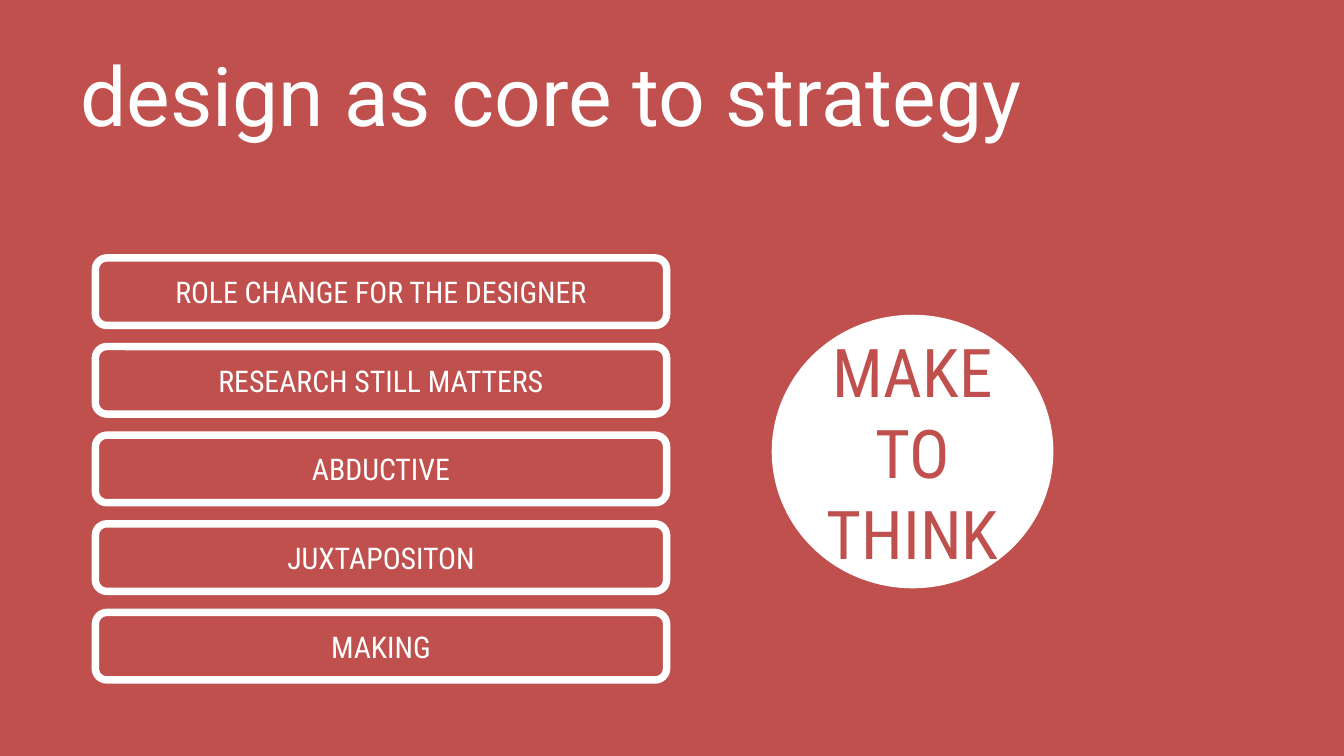
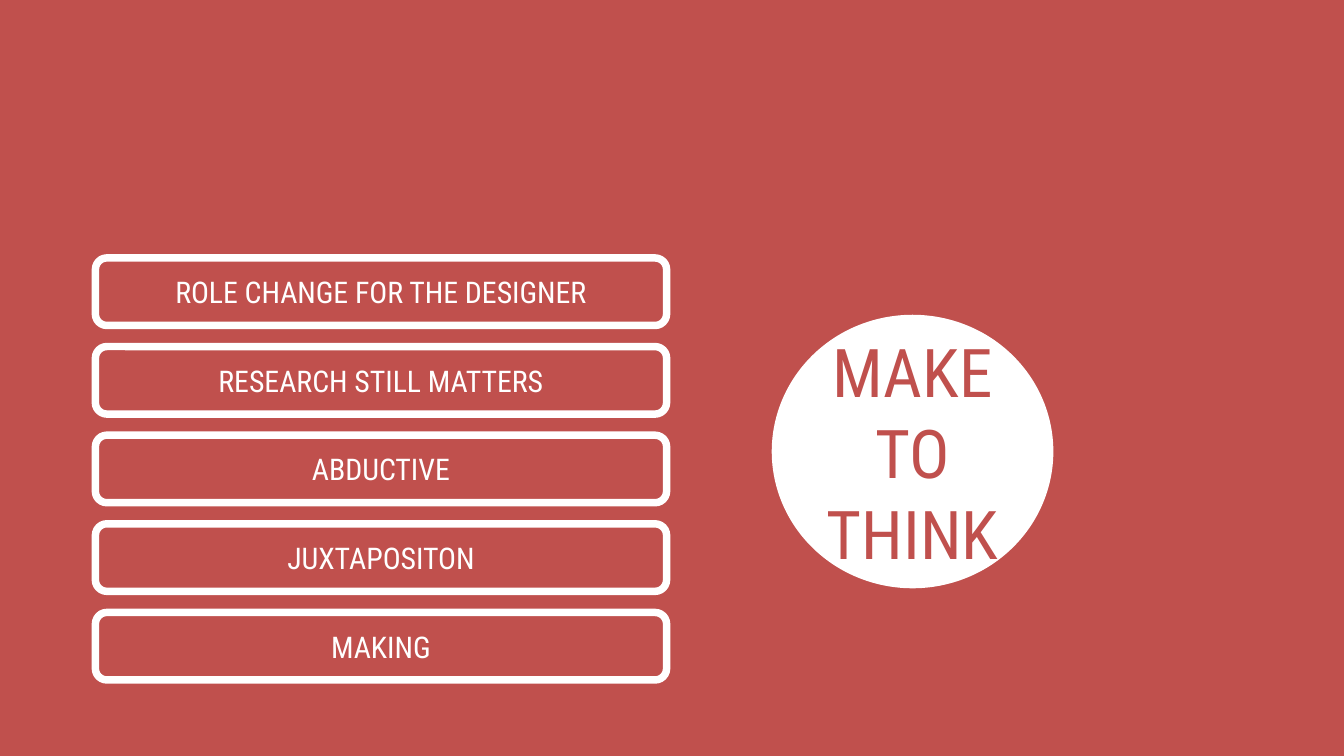
from pptx import Presentation
from pptx.dml.color import RGBColor
from pptx.enum.shapes import MSO_SHAPE
from pptx.enum.text import MSO_ANCHOR, PP_ALIGN
from pptx.util import Inches, Pt

COLORS = {"red": "C0504D", "white": "FFFFFF"}

# Text formats
TITLE = {"name": "Roboto", "size": Pt(44), "color": "white"}
BAR = {"name": "Roboto Condensed", "size": Pt(16), "color": "white"}
CIRCLE = {"name": "Roboto Condensed", "size": Pt(36), "color": "red"}

# Boxes: left, top, width, height in percent of the slide
TITLE_BOX = (5, 4.09, 90, 16.71)
BARS_BOX = (7.1, 34.13, 42.5, 55.82)
CIRCLE_BOX = (57.7, 42.13, 20.4, 35.2)

BAR_SHARE = 0.16  # height of one bar within the stack
THEMES = [
    "ROLE CHANGE FOR THE DESIGNER",
    "RESEARCH STILL MATTERS",
    "ABDUCTIVE",
    "JUXTAPOSITON",
    "MAKING",
]


def rgb(name):
    return RGBColor.from_string(COLORS[name])


def place(prs, box):
    """Turn a percent box into slide lengths."""
    sizes = (prs.slide_width, prs.slide_height) * 2
    return [round(size * share / 100) for size, share in zip(sizes, box)]


def write(sp, text, style, align, inset=(0.1, 0.05)):
    tf = sp.text_frame
    side, end = map(Inches, inset)
    frame = {"word_wrap": True, "vertical_anchor": MSO_ANCHOR.MIDDLE,
             "margin_left": side, "margin_right": side,
             "margin_top": end, "margin_bottom": end}
    for key, value in frame.items():
        setattr(tf, key, value)
    p = tf.paragraphs[0]
    p.alignment = align
    r = p.add_run()
    r.text = text
    for key, value in style.items():
        if key == "color":
            r.font.color.rgb = rgb(value)
        else:
            setattr(r.font, key, value)


def add_outlined(shapes, kind, box, fill=None):
    """Shape with the thick white outline all slides share."""
    sp = shapes.add_shape(kind, *box)
    sp.shadow.inherit = False
    if fill:
        sp.fill.solid()
        sp.fill.fore_color.rgb = rgb(fill)
    else:
        sp.fill.background()
    sp.line.color.rgb = rgb("white")
    sp.line.width = Pt(4)
    return sp


def add_title(slide, box, text):
    write(slide.shapes.add_textbox(*box), text, TITLE, PP_ALIGN.LEFT)


def add_bars(shapes, box, labels):
    """Stack of evenly spaced bars filling the box."""
    left, top, width, height = box
    bar = round(height * BAR_SHARE)
    pitch = (height - bar) / (len(labels) - 1)
    for row, label in enumerate(labels):
        sp = add_outlined(shapes, MSO_SHAPE.ROUNDED_RECTANGLE,
                          (left, round(top + row * pitch), width, bar))
        sp.adjustments[0] = 0.17
        write(sp, label, BAR, PP_ALIGN.CENTER)


def add_circle(slide, box, text):
    sp = add_outlined(slide.shapes, MSO_SHAPE.OVAL, box, "white")
    write(sp, text, CIRCLE, PP_ALIGN.CENTER, inset=(0, 0))


def add_strategy_slide(prs, title=None):
    slide = prs.slides.add_slide(prs.slide_layouts[6])
    shapes = slide.shapes
    if title:
        add_title(slide, place(prs, TITLE_BOX), title)
    else:
        # Without a title the bars form one group
        shapes = slide.shapes.add_group_shape().shapes
    add_bars(shapes, place(prs, BARS_BOX), THEMES)
    add_circle(slide, place(prs, CIRCLE_BOX), "MAKE TO THINK")


def main():
    prs = Presentation()
    prs.slide_width = Inches(10)
    prs.slide_height = prs.slide_width * 9 // 16

    # Red background for every slide
    fill = prs.slide_master.background.fill
    fill.solid()
    fill.fore_color.rgb = rgb("red")

    add_strategy_slide(prs, "design as core to strategy")
    add_strategy_slide(prs)
    prs.save("out.pptx")


if __name__ == "__main__":
    main()
